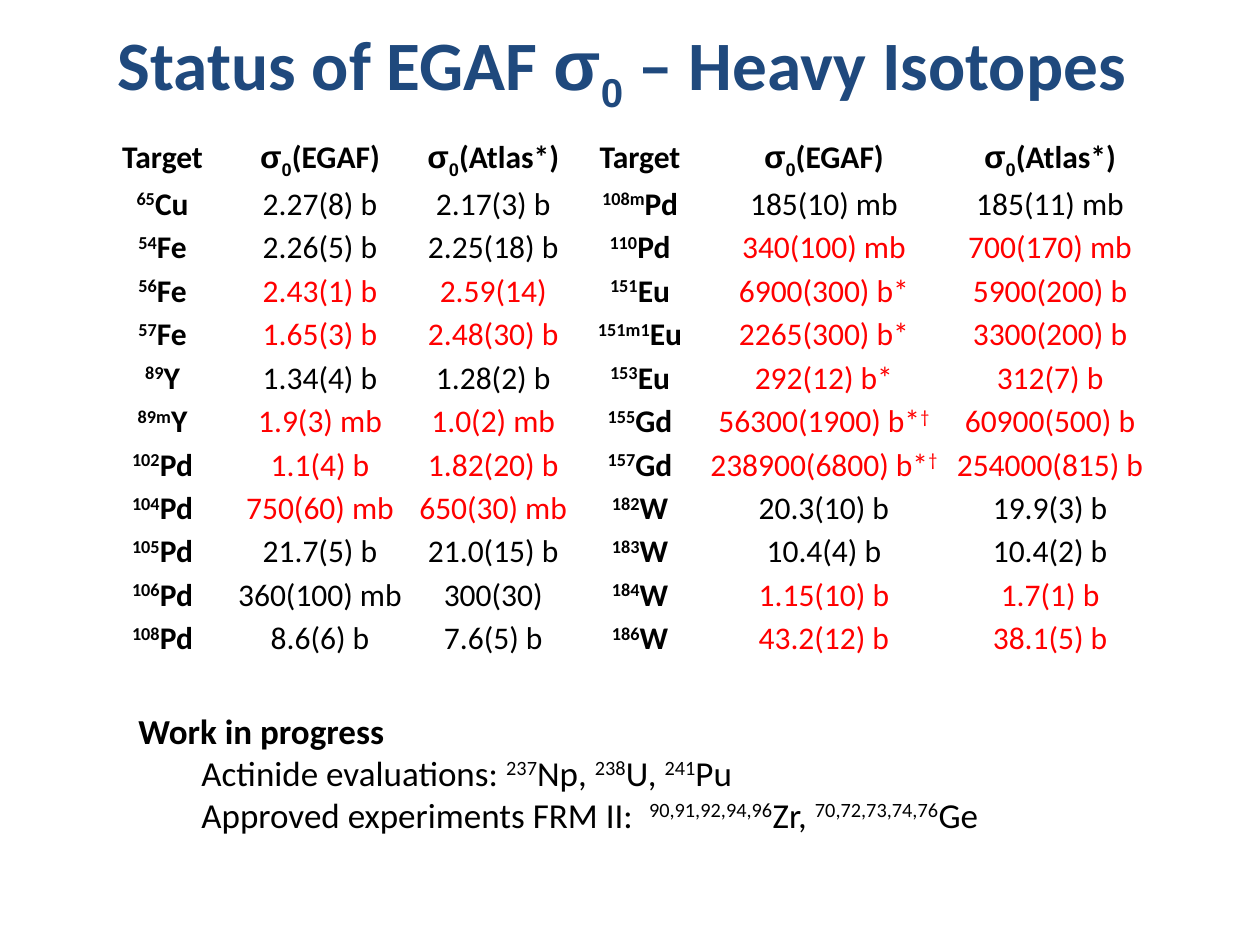
from pptx import Presentation
from pptx.dml.color import RGBColor
from pptx.enum.text import MSO_ANCHOR, MSO_AUTO_SIZE, PP_ALIGN
from pptx.oxml.ns import qn
from pptx.util import Inches, Pt
from lxml.etree import SubElement

COLORS = {"title": "1F497D", "text": "000000", "differs": "FF0000", "cell": "FFFFFF"}
BASELINES = {"^": "30000", "_": "-25000"}
NO_TABLE_STYLE = "{2D5ABB26-0587-4C30-8999-92F81FD0307C}"

HEADER = ("Target", "{σ}{_0}(EGAF)", "{σ}{_0}(Atlas*)")
CROSS_SECTIONS = [
    ("{^65}Cu", "2.27(8) b", "2.17(3) b"),
    ("{^54}Fe", "2.26(5) b", "2.25(18) b"),
    ("{^56}Fe", "2.43(1) b", "2.59(14)"),
    ("{^57}Fe", "1.65(3) b", "2.48(30) b"),
    ("{^89}Y", "1.34(4) b", "1.28(2) b"),
    ("{^89m}Y", "1.9(3) mb", "1.0(2) mb"),
    ("{^102}Pd", "1.1(4) b", "1.82(20) b"),
    ("{^104}Pd", "750(60) mb", "650(30) mb"),
    ("{^105}Pd", "21.7(5) b", "21.0(15) b"),
    ("{^106}Pd", "360(100) mb", "300(30)"),
    ("{^108}Pd", "8.6(6) b", "7.6(5) b"),
    ("{^108m}Pd", "185(10) mb", "185(11) mb"),
    ("{^110}Pd", "340(100) mb", "700(170) mb"),
    ("{^151}Eu", "6900(300) b*", "5900(200) b"),
    ("{^151m1}Eu", "2265(300) b*", "3300(200) b"),
    ("{^153}Eu", "292(12) b*", "312(7) b"),
    ("{^155}Gd", "56300(1900) b*{^†}", "60900(500) b"),
    ("{^157}Gd", "238900(6800) b*{^†}", "254000(815) b"),
    ("{^182}W", "20.3(10) b", "19.9(3) b"),
    ("{^183}W", "10.4(4) b", "10.4(2) b"),
    ("{^184}W", "1.15(10) b", "1.7(1) b"),
    ("{^186}W", "43.2(12) b", "38.1(5) b"),
]
DIFFERING = {
    "{^56}Fe", "{^57}Fe", "{^89m}Y", "{^102}Pd", "{^104}Pd", "{^110}Pd", "{^151}Eu",
    "{^151m1}Eu", "{^153}Eu", "{^155}Gd", "{^157}Gd", "{^184}W", "{^186}W",
}
COLUMN_WIDTHS = (1.08, 1.42, 1.33, 1, 1.92, 1.67)


def write(paragraph, text, size=18, color="text", bold=False, align=None):
    """Add text as runs; {^x} is superscript, {_x} subscript, {σ} a symbol."""
    paragraph.alignment = align
    for piece in filter(None, text.replace("}", "{").split("{")):
        baseline = BASELINES.get(piece[0])
        run = paragraph.add_run()
        run.text = piece[1:] if baseline else piece
        run.font.name = "Arial" if piece[0] in "σ_" else "Calibri"
        run.font.size = Pt(size)
        run.font.bold = bold
        run.font.color.rgb = RGBColor.from_string(COLORS[color])
        if baseline:
            run.font._element.set("baseline", baseline)


class IsotopeSlide:
    def __init__(self, presentation):
        self.slide = presentation.slides.add_slide(presentation.slide_layouts[5])
        self.cell_margin = Inches(0.02)
        self.row_height = 0.34

    def title(self, text, left, top, width, height):
        heading = self.slide.shapes.title
        heading.left, heading.top = Inches(left), Inches(top)
        heading.width, heading.height = Inches(width), Inches(height)
        frame = heading.text_frame
        frame.auto_size = MSO_AUTO_SIZE.NONE
        frame.vertical_anchor = MSO_ANCHOR.MIDDLE
        write(frame.paragraphs[0], text, size=39.6, color="title", bold=True,
              align=PP_ALIGN.CENTER)

    def cell(self, cell, text, **text_format):
        cell.margin_left = cell.margin_right = self.cell_margin
        cell.margin_top = cell.margin_bottom = self.cell_margin
        cell.fill.solid()
        cell.fill.fore_color.rgb = RGBColor.from_string(COLORS["cell"])
        fill_color = cell._tc.tcPr.find(".//" + qn("a:srgbClr"))
        SubElement(fill_color, qn("a:alpha")).set("val", "50000")
        write(cell.text_frame.paragraphs[0], text, align=PP_ALIGN.CENTER, **text_format)

    def isotope_table(self, isotopes, left, top):
        """Lay the isotopes out in two halves side by side, each under its own header."""
        half = len(isotopes) // 2
        table = self.slide.shapes.add_table(
            half + 1, len(COLUMN_WIDTHS), Inches(left), Inches(top),
            Inches(sum(COLUMN_WIDTHS)), Inches(self.row_height * (half + 1))).table
        table.first_row = table.horz_banding = False
        table._tbl.tblPr.find(qn("a:tableStyleId")).text = NO_TABLE_STYLE
        for column, width in zip(table.columns, COLUMN_WIDTHS):
            column.width = Inches(width)
        for side, members in enumerate((isotopes[:half], isotopes[half:])):
            for row, record in enumerate([HEADER, *members]):
                for column, value in enumerate(record):
                    differs = column > 0 and record[0] in DIFFERING
                    self.cell(table.cell(row, side * len(HEADER) + column), value,
                              bold=row == 0 or column == 0,
                              color="differs" if differs else "text")

    def outline(self, heading, items, left, top, width, height):
        frame = self.slide.shapes.add_textbox(
            Inches(left), Inches(top), Inches(width), Inches(height)).text_frame
        frame.word_wrap = True
        frame.auto_size = MSO_AUTO_SIZE.SHAPE_TO_FIT_TEXT
        write(frame.paragraphs[0], heading, size=20, bold=True)
        for item in items:
            paragraph = frame.add_paragraph()
            paragraph.level = 1
            paragraph._p.get_or_add_pPr().set("marL", str(Inches(0.5)))
            write(paragraph, item, size=20)


def main():
    presentation = Presentation()
    presentation.slide_width, presentation.slide_height = Inches(10), Inches(7.5)
    status = IsotopeSlide(presentation)
    status.title("Status of EGAF {σ}{_0} – Heavy Isotopes ", 0.5, 0.08, 9, 0.92)
    status.isotope_table(CROSS_SECTIONS, 0.75, 1.08)
    status.outline("Work in progress", [
        "Actinide evaluations: {^237}Np, {^238}U, {^241}Pu",
        "Approved experiments FRM II:  {^90,91,92,94,96}Zr, {^70,72,73,74,76}Ge",
    ], 1, 5.58, 7.42, 1.11)
    presentation.save("out.pptx")


if __name__ == "__main__":
    main()
